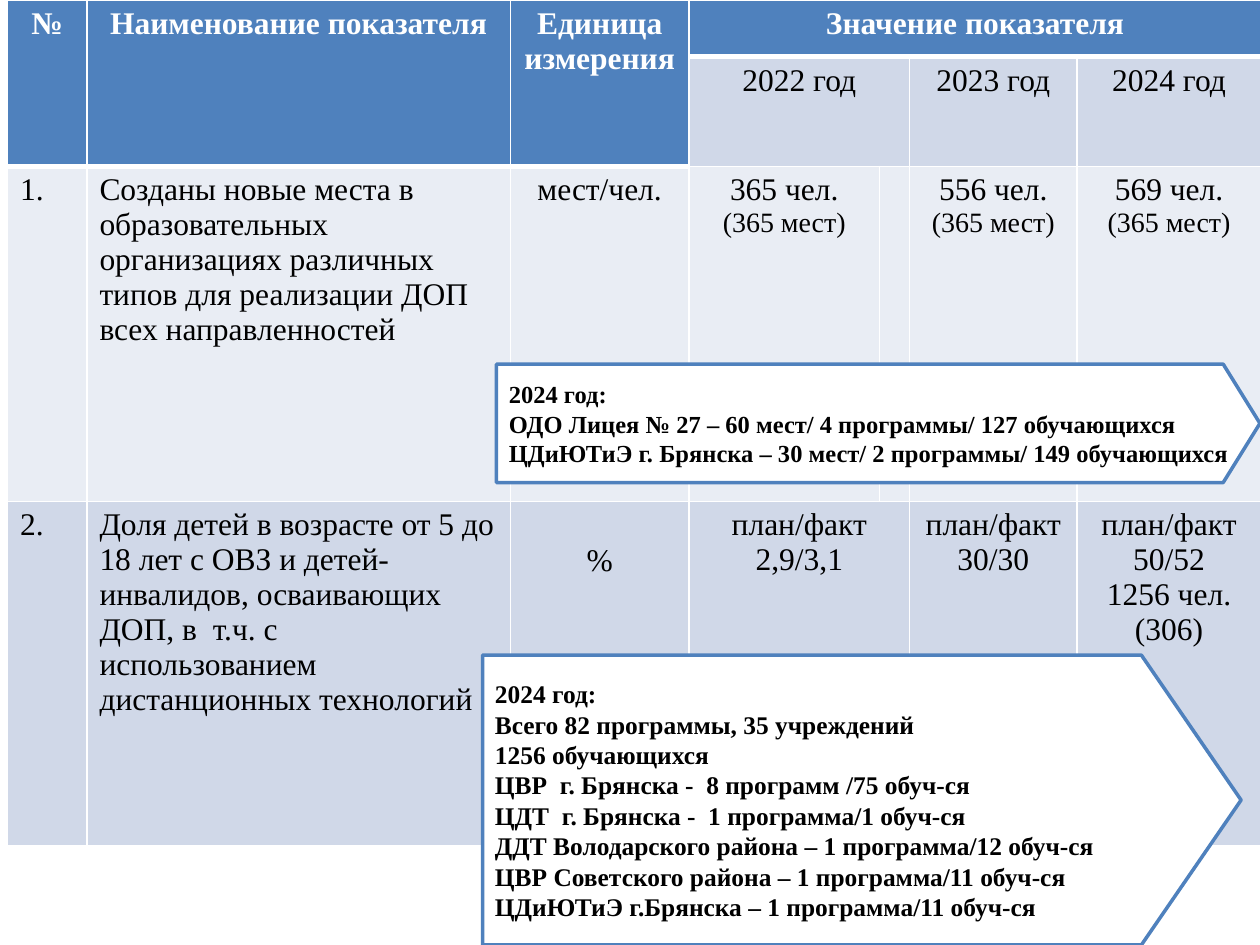
"""Build a slide with a table of indicators and two arrow-shaped callouts."""
from pptx import Presentation
from pptx.dml.color import RGBColor
from pptx.enum.shapes import MSO_SHAPE
from pptx.enum.text import MSO_ANCHOR, PP_ALIGN
from pptx.oxml import parse_xml
from pptx.oxml.ns import nsdecls
from pptx.util import Inches, Pt

THEME = {
    "font": "Times New Roman",
    "blue": RGBColor(0x4F, 0x81, 0xBD),
    "band_dark": RGBColor(0xD0, 0xD8, 0xE8),
    "band_light": RGBColor(0xE9, 0xED, 0xF4),
    "white": RGBColor(0xFF, 0xFF, 0xFF),
    "black": RGBColor(0, 0, 0),
    "body": Pt(18),
    "small": Pt(16),
}


def write(tf, lines, align, size, color, bold):
    for i, line in enumerate(lines):
        p = tf.add_paragraph() if i else tf.paragraphs[0]
        p.alignment = align
        for text in line.split("|"):
            r = p.add_run()
            r.text = text
            run_size = THEME["small"] if text.startswith("(365") else size
            fmt = {"name": THEME["font"], "size": run_size, "bold": bold}
            for key, value in fmt.items():
                setattr(r.font, key, value)
            r.font.color.rgb = color


def set_borders(cell, bottom):
    tc_pr = cell._tc.get_or_add_tcPr()
    widths = {"lnL": 1, "lnR": 1, "lnT": 1, "lnB": bottom}
    for i, (tag, width) in enumerate(widths.items()):
        tc_pr.insert(i, parse_xml(
            f'<a:{tag} {nsdecls("a")} w="{Pt(width)}"><a:solidFill>'
            f'<a:srgbClr val="{THEME["white"]}"/></a:solidFill></a:{tag}>'))


prs = Presentation()
prs.slide_width, prs.slide_height = Inches(10), Inches(7.5)
s = prs.slides.add_slide(prs.slide_layouts[6])

col_widths = [0.63, 3.36, 1.42, 1.51, 0.23, 1.33, 1.46]
row_heights = [0.45, 0.87, 2.66, 2.73]
row_fills = [THEME["blue"], THEME["band_dark"], THEME["band_light"], THEME["band_dark"]]
merges = [((0, 0), (1, 0)), ((0, 1), (1, 1)), ((0, 2), (1, 2)),
          ((0, 3), (0, 6)), ((1, 3), (1, 4)), ((3, 3), (3, 4))]
cells = {
    (0, 0): ["№"],
    (0, 1): ["Наименование показателя"],
    (0, 2): ["Единица измерения"],
    (0, 3): ["Значение показателя"],
    (1, 3): ["2022 год"],
    (1, 5): ["2023 год"],
    (1, 6): ["2024 год"],
    (2, 0): ["1."],
    (2, 1): ["Созданы новые места в образовательных",
             "организациях различных типов для реализации ДОП всех направленностей"],
    (2, 2): ["мест/чел."],
    (2, 3): ["365 чел. |(365 мест)"],
    (2, 5): ["556 чел.", "(365 мест)"],
    (2, 6): ["569 чел.", "(365 мест)"],
    (3, 0): ["2."],
    (3, 1): ["Доля детей в возрасте от 5 до 18 лет с ОВЗ и детей-инвалидов, осваивающих",
             "ДОП, в  т.ч. с использованием",
             "дистанционных технологий"],
    (3, 2): ["%"],
    (3, 3): ["план/факт", "2,9/3,1"],
    (3, 5): ["план/факт", "30/30"],
    (3, 6): ["план/факт", "50/52", "1256 чел. (306)"],
}

table = s.shapes.add_table(len(row_heights), len(col_widths), Inches(0.06), Inches(0),
                           Inches(sum(col_widths)), Inches(sum(row_heights))).table
for column, width in zip(table.columns, col_widths):
    column.width = Inches(width)
for row, height in zip(table.rows, row_heights):
    row.height = Inches(height)
for (top, left), (bottom, right) in merges:
    table.cell(top, left).merge(table.cell(bottom, right))

for i, row_fill in enumerate(row_fills):
    for j in range(len(col_widths)):
        cell = table.cell(i, j)
        header = i == 0 or (i == 1 and j < 3)
        cell.fill.solid()
        cell.fill.fore_color.rgb = THEME["blue"] if header else row_fill
        set_borders(cell, 3 if header else 1)
        if (i, j) in cells:
            align = PP_ALIGN.LEFT if i > 1 and j < 2 else PP_ALIGN.CENTER
            color = THEME["white"] if header else THEME["black"]
            write(cell.text_frame, cells[i, j], align, THEME["body"], color, header)
table.cell(3, 2).margin_top = Inches(0.33)

callouts = [
    ((3.83, 5.2, 6.02, 2.3), 0.344, Pt(14.5), [
        "2024 год:",
        "Всего 82 программы, 35 учреждений",
        "1256 обучающихся",
        "ЦВР  г. Брянска -  8 программ /75 обуч-ся",
        "ЦДТ  г. Брянска -  1 программа/1 обуч-ся",
        "ДДТ Володарского района – 1 программа/12 обуч-ся",
        "ЦВР Советского района – 1 программа/11 обуч-ся",
        "ЦДиЮТиЭ г.Брянска – 1 программа/11 обуч-ся"]),
    ((3.94, 2.89, 6.06, 0.94), 0.31, Pt(14), [
        "2024 год:",
        "ОДО Лицея № 27 – 60 мест/ 4 программы/ 127 обучающихся",
        "ЦДиЮТиЭ г. Брянска – 30 мест/ 2 программы/ 149 обучающихся"]),
]
for box, point, size, lines in callouts:
    sp = s.shapes.add_shape(MSO_SHAPE.PENTAGON, *map(Inches, box))
    sp.adjustments[0] = point
    sp.shadow.inherit = False
    sp.fill.solid()
    sp.fill.fore_color.rgb = THEME["white"]
    sp.line.color.rgb = THEME["blue"]
    sp.line.width = Pt(2)
    tf = sp.text_frame
    for key, value in {"word_wrap": True, "vertical_anchor": MSO_ANCHOR.MIDDLE}.items():
        setattr(tf, key, value)
    write(tf, lines, PP_ALIGN.LEFT, size, THEME["black"], True)

prs.save("out.pptx")
